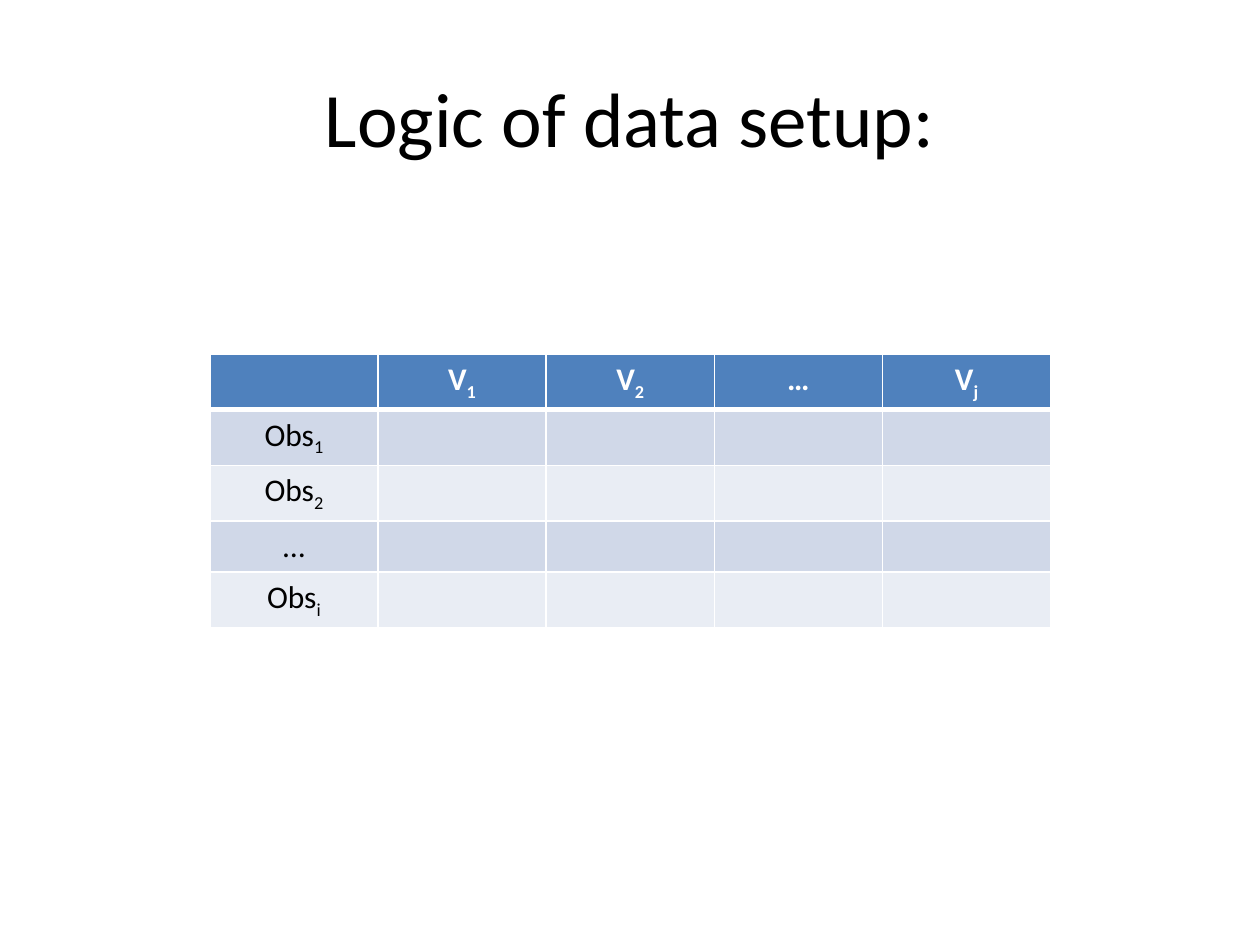
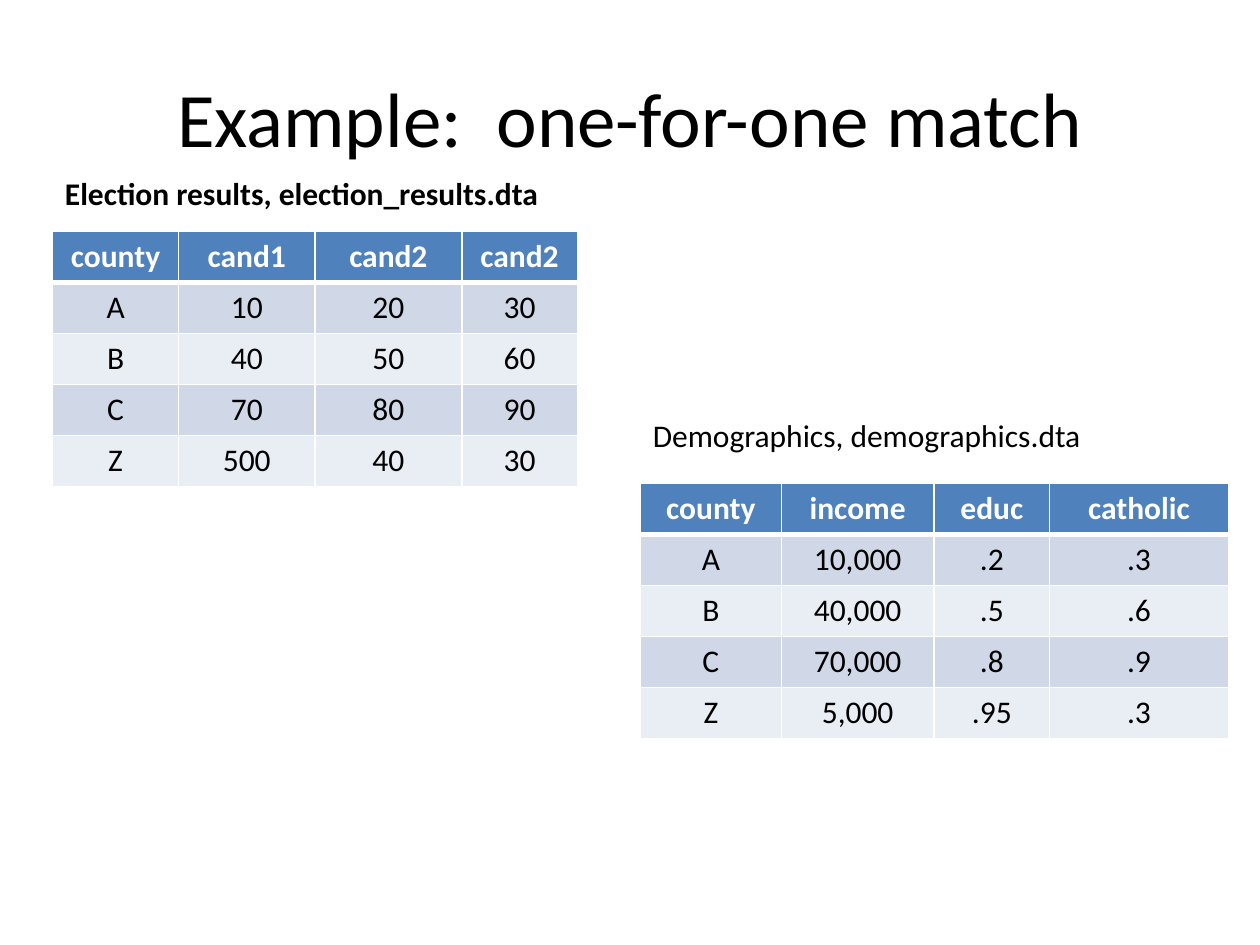
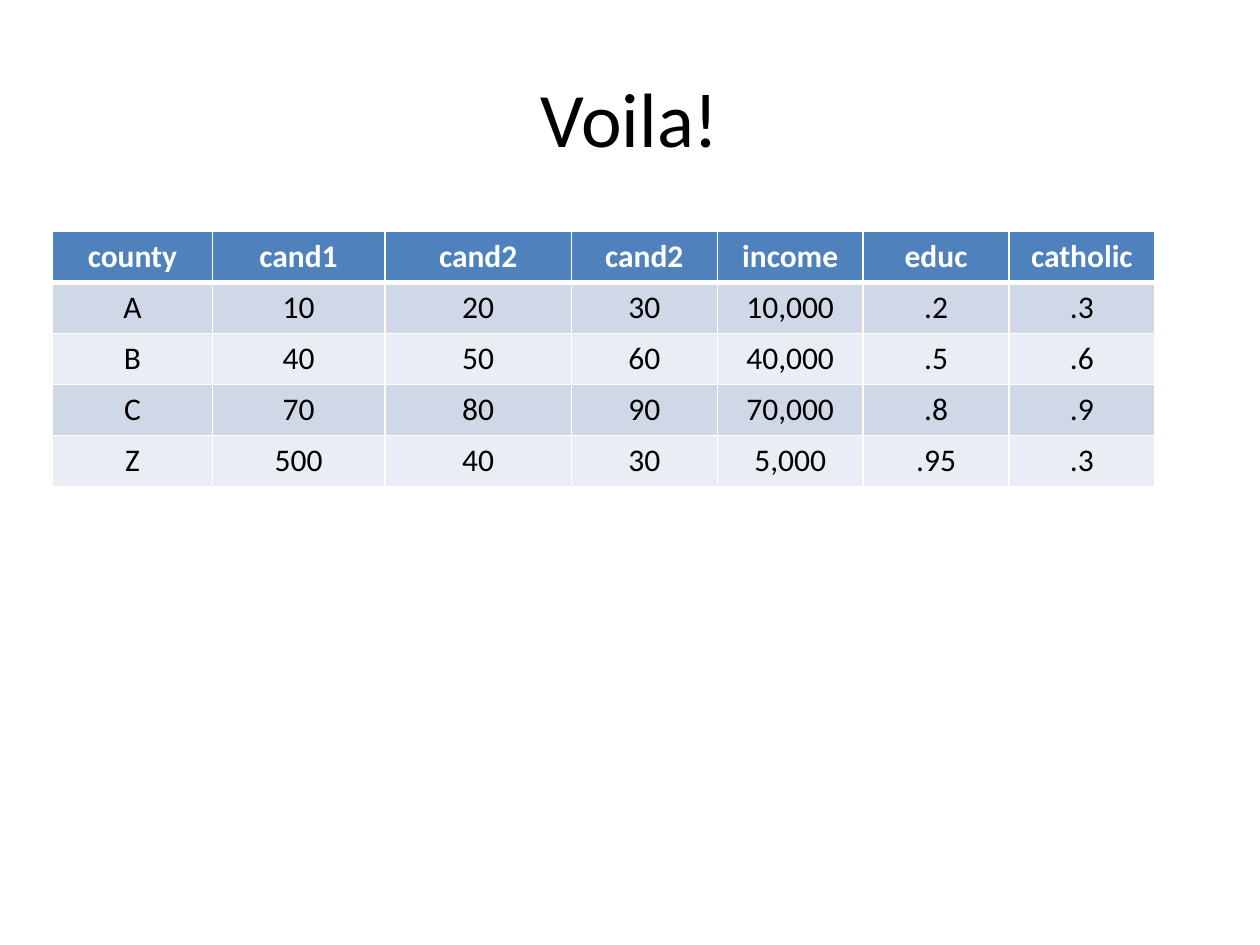
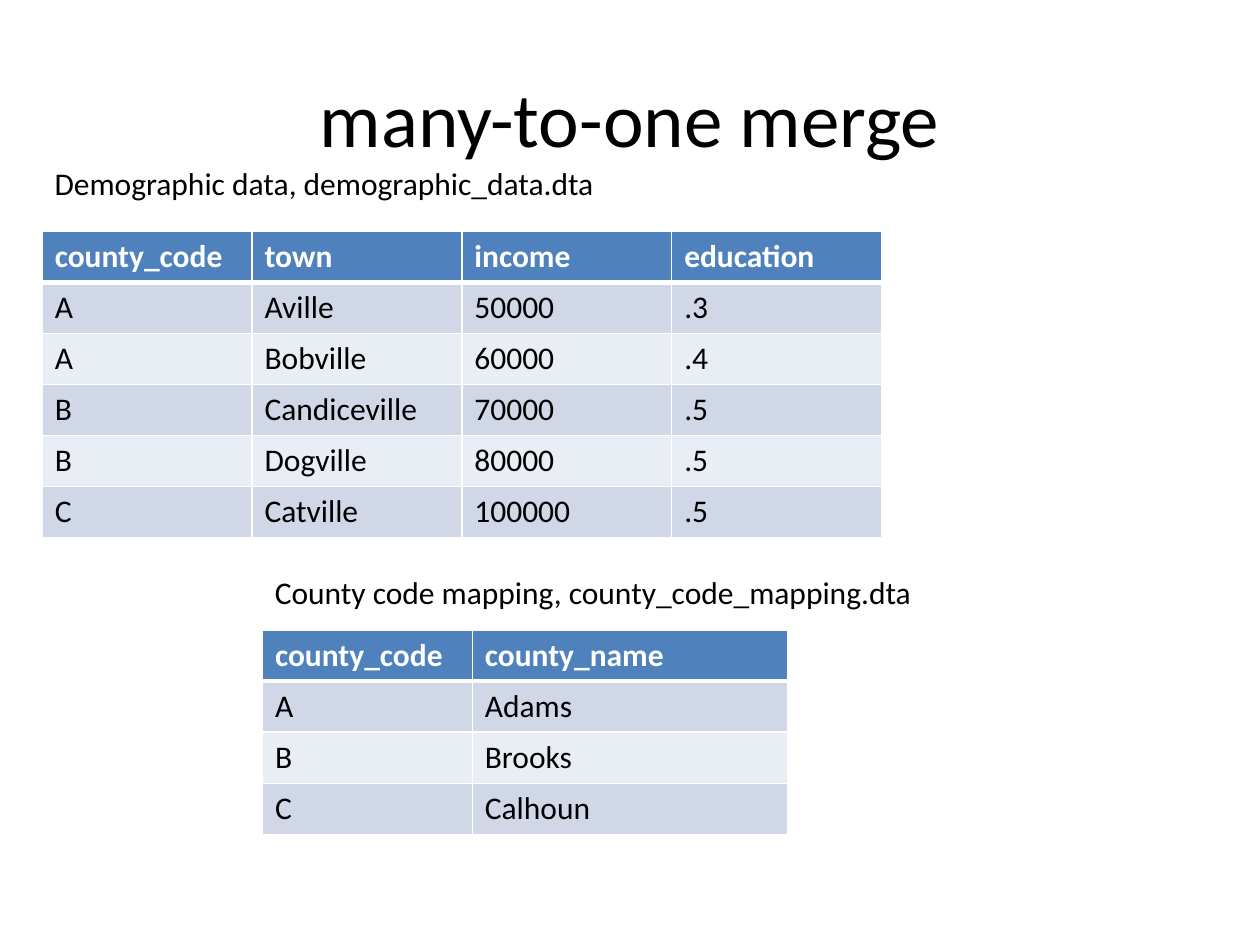
"""Build four slides on data setup and merging."""
import lxml.etree
import pptx
import pptx.dml.color
import pptx.enum.text
import pptx.oxml.ns
import pptx.util

Cm, Pt = pptx.util.Cm, pptx.util.Pt
Align = pptx.enum.text.PP_ALIGN
Anchor = pptx.enum.text.MSO_ANCHOR
Fit = pptx.enum.text.MSO_AUTO_SIZE
qn = pptx.oxml.ns.qn


def rgb(code):
    return pptx.dml.color.RGBColor.from_string(code)


class Deck:
    font = "Calibri"
    black, white = "000000", "FFFFFF"
    head, bands = "4F81BD", ("D0D8E8", "E9EDF4")
    row = 1.03

    def __init__(self):
        self.prs = pptx.Presentation()
        self.prs.slide_width, self.prs.slide_height = Cm(25.4), Cm(19.05)

    def start(self, title):
        self.slide = self.prs.slides.add_slide(self.prs.slide_layouts[6])
        frame = self.box(1.27, 0.76, 22.86, 3.18)
        frame.word_wrap = True
        frame.vertical_anchor = Anchor.MIDDLE
        self.put(frame, title, size=44, align=Align.CENTER)

    def box(self, left, top, width, height):
        area = map(Cm, (left, top, width, height))
        return self.slide.shapes.add_textbox(*area).text_frame

    def put(self, frame, text, size=18, color=black, bold=False, align=None):
        para = frame.paragraphs[0]
        para.alignment = align
        font = para.font
        font.name, font.size, font.bold = self.font, Pt(size), bold
        font.color.rgb = rgb(color)
        base, _, sub = text.partition("~")
        if base:
            para.add_run().text = base
        if sub:
            run = para.add_run()
            run.text = sub
            run._r.get_or_add_rPr().set("baseline", "-25000")

    def label(self, text, left, top, width, bold=False):
        frame = self.box(left, top, width, 1.03)
        frame.word_wrap = False
        frame.auto_size = Fit.SHAPE_TO_FIT_TEXT
        self.put(frame, text, bold=bold)

    def border(self, cell, side, width):
        props = cell._tc.get_or_add_tcPr()
        line = lxml.etree.SubElement(props, qn("a:ln" + side), w=str(Pt(width)))
        fill = lxml.etree.SubElement(line, qn("a:solidFill"))
        lxml.etree.SubElement(fill, qn("a:srgbClr"), val=self.white)

    def table(self, rows, left, top, widths, align=Align.CENTER):
        size = map(Cm, (left, top, sum(widths), self.row * len(rows)))
        grid = self.slide.shapes.add_table(len(rows), len(widths), *size).table
        grid.horz_banding = False
        for col, width in zip(grid.columns, widths):
            col.width = Cm(width)
        for r, row in enumerate(rows):
            grid.rows[r].height = Cm(self.row)
            first = r == 0
            fill = self.head if first else self.bands[(r - 1) % 2]
            color = self.white if first else self.black
            for c, text in enumerate(row):
                cell = grid.cell(r, c)
                for side in "LRTB":
                    thick = (r, side) in ((0, "B"), (1, "T"))
                    self.border(cell, side, 3 if thick else 1)
                cell.fill.solid()
                cell.fill.fore_color.rgb = rgb(fill)
                self.put(cell.text_frame, text, color=color, bold=first, align=align)


def main():
    votes = [
        ["county", "cand1", "cand2", "cand2"],
        ["A", "10", "20", "30"],
        ["B", "40", "50", "60"],
        ["C", "70", "80", "90"],
        ["Z", "500", "40", "30"],
    ]
    people = [
        ["county", "income", "educ", "catholic"],
        ["A", "10,000", ".2", ".3"],
        ["B", "40,000", ".5", ".6"],
        ["C", "70,000", ".8", ".9"],
        ["Z", "5,000", ".95", ".3"],
    ]
    merged = [vote + person[1:] for vote, person in zip(votes, people)]
    towns = [
        ["county_code", "town", "income", "education"],
        ["A", "Aville", "50000", ".3"],
        ["A", "Bobville", "60000", ".4"],
        ["B", "Candiceville", "70000", ".5"],
        ["B", "Dogville", "80000", ".5"],
        ["C", "Catville", "100000", ".5"],
    ]
    names = [
        ["county_code", "county_name"],
        ["A", "Adams"],
        ["B", "Brooks"],
        ["C", "Calhoun"],
    ]
    logic = [["", "V~1", "V~2", "…", "V~j"]]
    logic += [[name] + [""] * 4 for name in ("Obs~1", "Obs~2", "…", "Obs~i")]

    deck = Deck()
    deck.start("Logic of data setup:")
    deck.table(logic, 4.23, 7.14, [3.39] * 5)

    deck.start("Example:  one-for-one match")
    deck.label("Election results, election_results.dta", 1.06, 3.39, 10.13, bold=True)
    deck.table(votes, 1.06, 4.66, [2.54, 2.75, 2.96, 2.33])
    deck.table(people, 12.91, 9.74, [2.84, 3.08, 2.33, 3.6])
    deck.label("Demographics, demographics.dta", 12.91, 8.26, 9.25)

    deck.start("Voila!")
    deck.table(merged, 1.06, 4.66, [3.22, 3.48, 3.76] + [2.94] * 4)

    deck.start("many-to-one merge")
    deck.table(towns, 0.85, 4.66, [4.23] * 4, align=None)
    deck.label("Demographic data, demographic_data.dta", 0.85, 3.18, 11.51)
    deck.table(names, 5.29, 12.7, [4.23, 6.35], align=None)
    deck.label("County code mapping, county_code_mapping.dta", 5.29, 11.43, 13.51)

    deck.prs.save("out.pptx")


if __name__ == "__main__":
    main()
